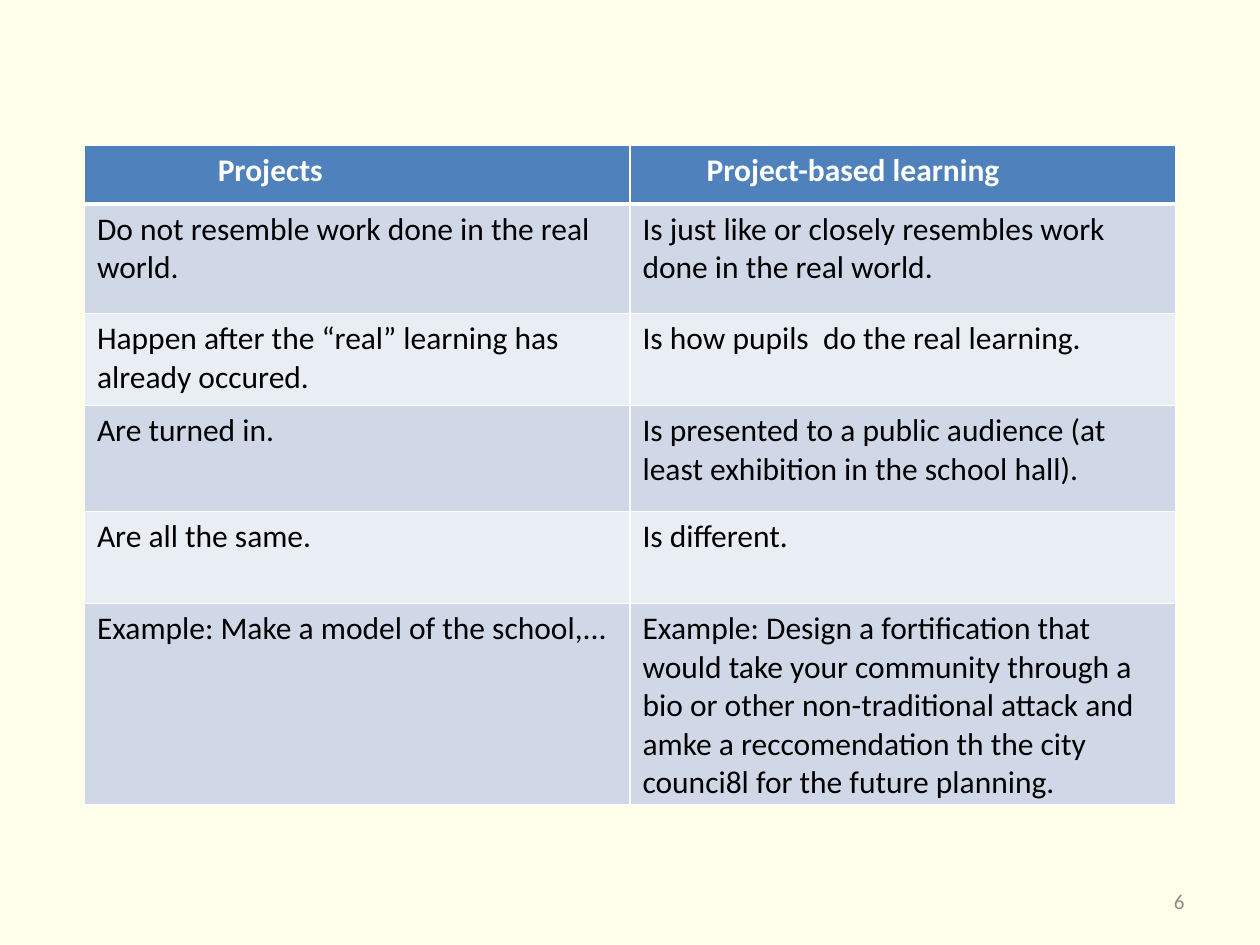
"""Build a slide with a table comparing projects and project-based learning."""
from dataclasses import dataclass

from lxml.etree import SubElement
from pptx import Presentation
from pptx.dml.color import RGBColor
from pptx.enum.text import MSO_ANCHOR, PP_ALIGN
from pptx.oxml.ns import qn
from pptx.slide import Slide
from pptx.table import _Cell as Cell
from pptx.util import Pt

CREAM = RGBColor(0xFF, 0xFF, 0xE9)
WHITE = RGBColor(0xFF, 0xFF, 0xFF)
BLACK = RGBColor(0x00, 0x00, 0x00)
GRAY = RGBColor(0x8C, 0x8C, 0x8C)
BLUE = RGBColor(0x4F, 0x81, 0xBD)
BANDS = (RGBColor(0xD0, 0xD8, 0xE8), RGBColor(0xE9, 0xED, 0xF4))

HEADER_FONT = {"name": "Calibri", "size": Pt(18), "bold": True}
BODY_FONT = {"name": "Calibri", "size": Pt(18), "bold": False}
NUMBER_FONT = {"name": "Calibri", "size": Pt(12), "bold": False}
NUMBER_FRAME = {"word_wrap": True, "vertical_anchor": MSO_ANCHOR.MIDDLE}
COLUMN_WIDTH = 311.76
HEADER_INDENTS = (76.2, 43.8)


@dataclass(frozen=True)
class Row:
    height: float
    projects: str
    project_based: str


ROWS = (
    Row(33.84, "Projects", "Project-based learning"),
    Row(62.64, "Do not resemble work done in the real world.",
        "Is just like or closely resembles work done in the real world."),
    Row(52.56, "Happen after the “real” learning has already occured.",
        "Is how pupils  do the real learning."),
    Row(60.48, "Are turned in.",
        "Is presented to a public audience (at least exhibition in the school hall)."),
    Row(52.56, "Are all the same.", "Is different."),
    Row(115, "Example: Make a model of the school,...",
        "Example: Design a fortification that would take your community through a bio "
        "or other non-traditional attack and amke a reccomendation th the city "
        "counci8l for the future planning."),
)


def set_values(target: object, values: dict) -> None:
    for name, value in values.items():
        setattr(target, name, value)


def write_text(frame, text: str, font: dict, color: RGBColor) -> None:
    run = frame.paragraphs[0].add_run()
    run.text = text
    set_values(run.font, font)
    run.font.color.rgb = color


def set_borders(cell: Cell, widths: dict[str, float]) -> None:
    properties = cell._tc.get_or_add_tcPr()
    for position, (side, width) in enumerate(widths.items()):
        line = SubElement(properties, qn(f"a:{side}"), w=str(Pt(width)))
        fill = SubElement(line, qn("a:solidFill"))
        SubElement(fill, qn("a:srgbClr"), val=str(WHITE))
        properties.insert(position, line)


def draw_table(slide: Slide, rows: tuple[Row, ...]) -> None:
    height = sum(row.height for row in rows)
    table = slide.shapes.add_table(
        len(rows), 2, Pt(48.24), Pt(82.8), Pt(2 * COLUMN_WIDTH), Pt(height)
    ).table
    for index, row in enumerate(rows):
        table.rows[index].height = Pt(row.height)
        is_header = index == 0
        for column, text in enumerate((row.projects, row.project_based)):
            cell = table.cell(index, column)
            cell.fill.solid()
            cell.fill.fore_color.rgb = BLUE if is_header else BANDS[(index - 1) % 2]
            if is_header:
                cell.margin_left = Pt(HEADER_INDENTS[column])
            set_borders(cell, {"lnL": 1, "lnR": 1, "lnT": 3 if index == 1 else 1,
                               "lnB": 3 if is_header else 1})
            write_text(cell.text_frame, text, HEADER_FONT if is_header else BODY_FONT,
                       WHITE if is_header else BLACK)


def draw_slide_number(slide: Slide, number: str) -> None:
    frame = slide.shapes.add_textbox(Pt(516), Pt(500.5), Pt(168), Pt(28.75)).text_frame
    set_values(frame, NUMBER_FRAME)
    frame.paragraphs[0].alignment = PP_ALIGN.RIGHT
    write_text(frame, number, NUMBER_FONT, GRAY)


def main() -> None:
    presentation = Presentation()
    set_values(presentation, {"slide_width": Pt(720), "slide_height": Pt(540)})
    slide = presentation.slides.add_slide(presentation.slide_layouts[6])
    slide.background.fill.solid()
    slide.background.fill.fore_color.rgb = CREAM
    draw_slide_number(slide, "6")
    draw_table(slide, ROWS)
    presentation.save("out.pptx")


if __name__ == "__main__":
    main()
